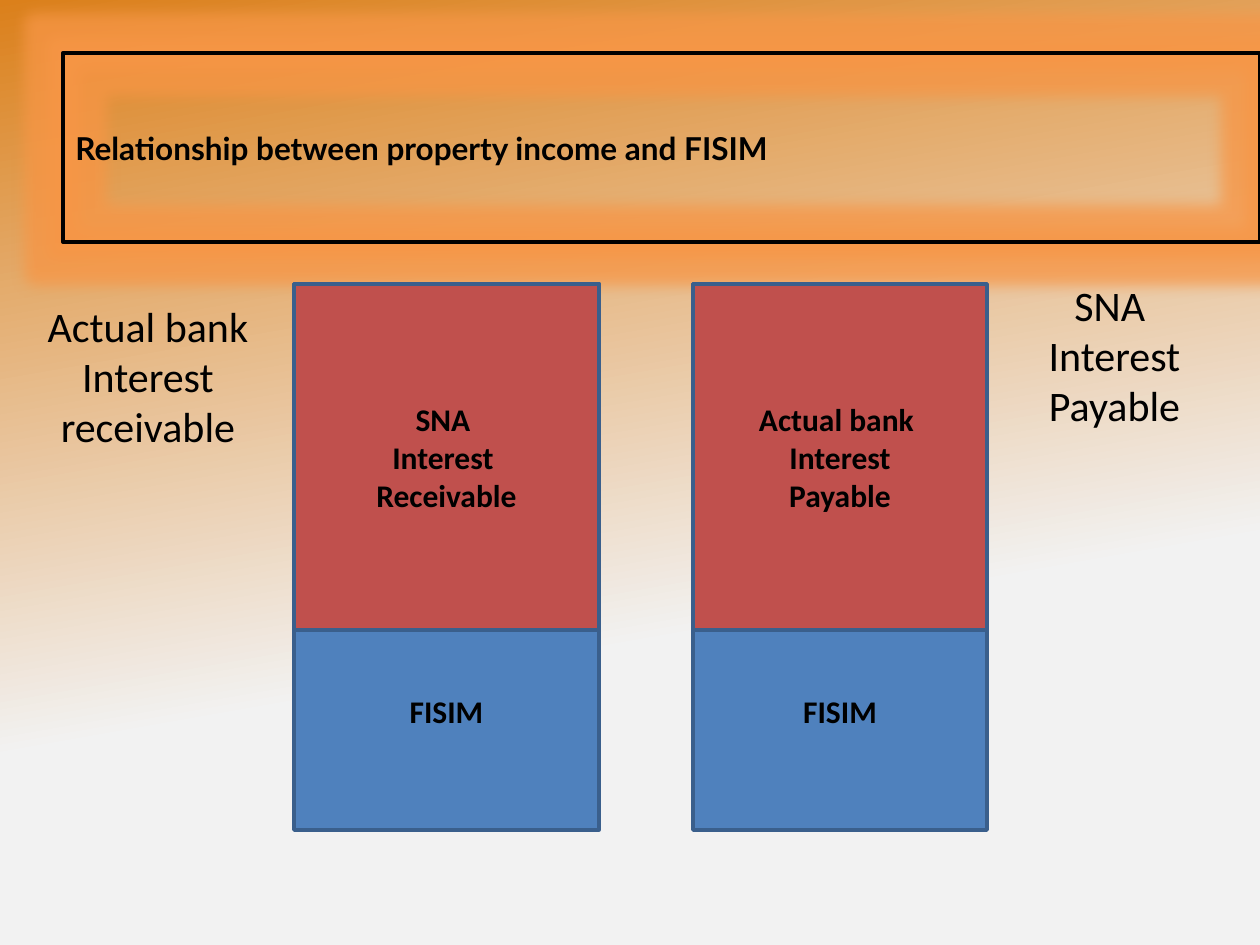
from lxml import etree
from pptx import Presentation
from pptx.dml.color import RGBColor
from pptx.enum.shapes import MSO_SHAPE as Shape
from pptx.enum.text import MSO_ANCHOR as Anchor, PP_ALIGN as Align
from pptx.oxml.ns import qn
from pptx.util import Pt

SCALE = 914400 / 126
SLIDE = (1260, 945)
TITLE = "Relationship between property income and FISIM"
TITLE_BOX = (63, 53, 1197, 189)
BAR_TOP, BAR_HEIGHT, INTEREST_HEIGHT = 284, 546, 346
FISIM_INSET = 313
BARS = [
    (294, 305, ["SNA ", "Interest ", "Receivable"]),
    (693, 294, ["Actual bank ", "Interest", "Payable"]),
]
LABELS = [
    ((21, 294, 254, 165), ["Actual bank", "Interest", "receivable"]),
    ((1008, 273, 213, 165), ["SNA ", "Interest", "Payable"]),
]
BLACK, BLUE, RED, EDGE = "000000", "4F81BD", "C0504D", "3A5F8C"
GRADIENT = [(0, "DB801B"), (0.65, "F2F2F2")]
GLOW, GLOW_RADIUS = "F79646", 28


def px(value):
    return round(value * SCALE)


def color(value):
    return RGBColor.from_string(value)


def write(shape, lines, size, bold, align, anchor, font="Calibri"):
    frame = shape.text_frame
    frame.word_wrap = True
    frame.vertical_anchor = anchor
    frame.text = "\n".join(lines)
    for paragraph in frame.paragraphs:
        paragraph.alignment = align
        paragraph.font.name = font
        paragraph.font.size = Pt(size)
        paragraph.font.bold = bold
        paragraph.font.color.rgb = color(BLACK)


def add_box(shapes, box, fill, line, width):
    shape = shapes.add_shape(Shape.RECTANGLE, *map(px, box))
    shape.shadow.inherit = False
    if fill:
        shape.fill.solid()
        shape.fill.fore_color.rgb = color(fill)
    else:
        shape.fill.background()
    shape.line.color.rgb = color(line)
    shape.line.width = Pt(width)
    return shape


def add_glow(shape):
    effects = shape._element.spPr.find(qn("a:effectLst"))
    glow = etree.SubElement(effects, qn("a:glow"), rad=str(px(GLOW_RADIUS)))
    tint = etree.SubElement(glow, qn("a:srgbClr"), val=GLOW)
    etree.SubElement(tint, qn("a:alpha"), val="75000")


def main():
    """Build the slide on property income and FISIM."""
    presentation = Presentation()
    presentation.slide_width, presentation.slide_height = map(px, SLIDE)
    slide = presentation.slides.add_slide(presentation.slide_layouts[6])

    background = slide.background.fill
    background.gradient()
    background.gradient_angle = 280
    for stop, (position, value) in zip(background.gradient_stops, GRADIENT):
        stop.position = position
        stop.color.rgb = color(value)

    title = add_box(slide.shapes, TITLE_BOX, None, BLACK, 2.25)
    add_glow(title)
    write(title, [TITLE], 18, True, Align.LEFT, Anchor.MIDDLE, "Lato")

    for left, width, lines in BARS:
        shapes = slide.shapes.add_group_shape().shapes
        for height, fill, words, inset in [
            (BAR_HEIGHT, BLUE, ["FISIM"], FISIM_INSET),
            (INTEREST_HEIGHT, RED, lines, 6),
        ]:
            part = add_box(shapes, (left, BAR_TOP, width, height), fill, EDGE, 2)
            part.text_frame.margin_top = px(inset)
            write(part, words, 18, True, Align.CENTER, Anchor.MIDDLE)

    for box, lines in LABELS:
        label = slide.shapes.add_textbox(*map(px, box))
        write(label, lines, 24, False, Align.CENTER, Anchor.TOP)

    presentation.save("out.pptx")


if __name__ == "__main__":
    main()
